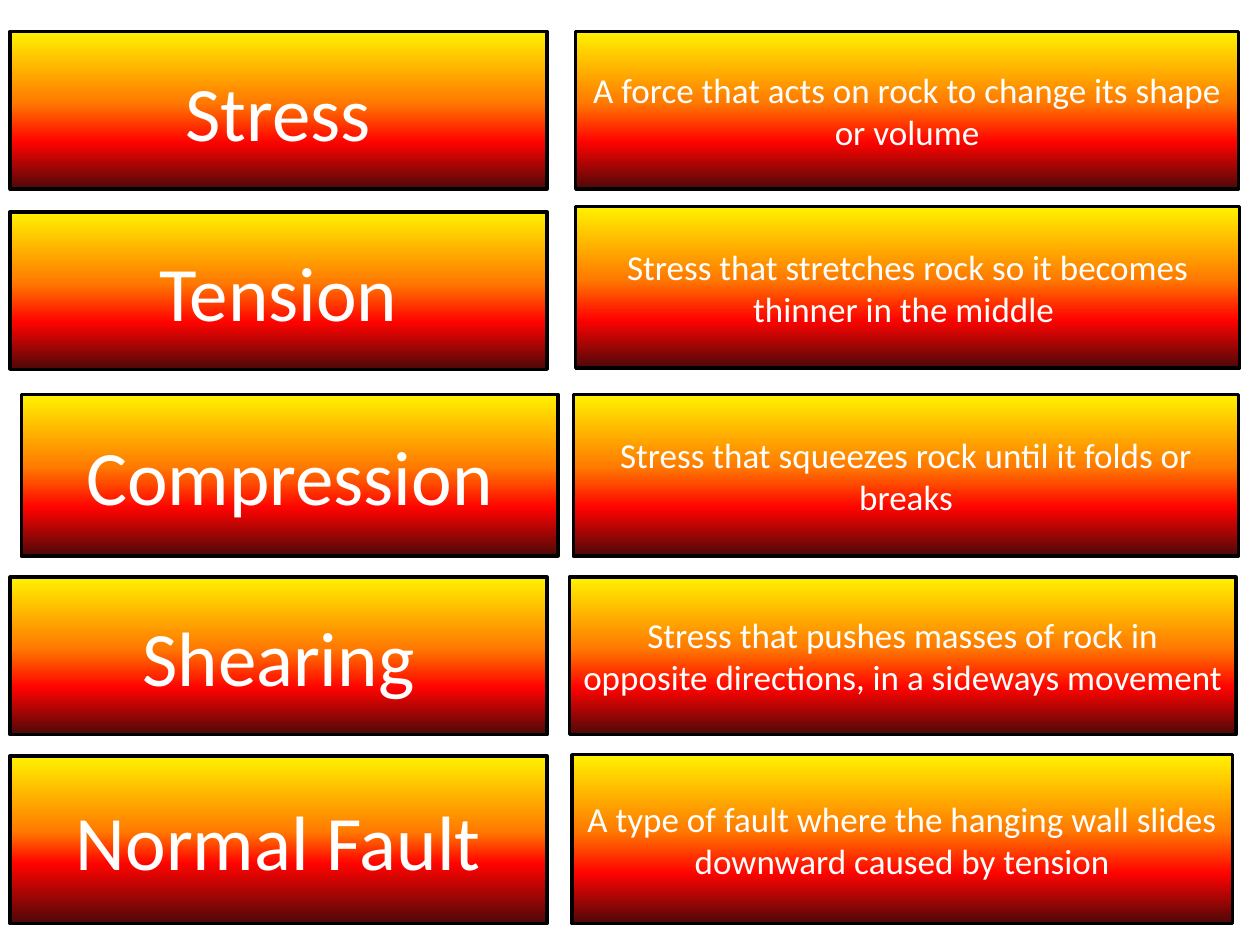
from copy import deepcopy
from dataclasses import dataclass

from pptx import Presentation
from pptx import util as u
from pptx.dml.color import RGBColor
from pptx.enum import shapes, text


@dataclass(frozen=True)
class Theme:
    """Hold the colours, font and type sizes of the slide."""
    font: str = "Calibri"
    ink: str = "FFFFFF"
    outline: str = "000000"
    outline_width: float = 2
    fire: tuple = ("FFF200", "FF7A00", "FF0300", "4D0808")
    term_size: int = 44
    definition_size: int = 20


THEME = Theme()
TERM_LEFT = 5.8
TERM_WIDTH = 306.7
RED_STOP = 0.7

TERMS = [
    ("Stress", TERM_LEFT, 18, 90, RED_STOP),
    ("Tension", TERM_LEFT, 121, 90, RED_STOP),
    ("Compression", 12.2, 225.4, 92.2, RED_STOP),
    ("Shearing", TERM_LEFT, 329.8, 90, RED_STOP),
    ("Normal Fault", TERM_LEFT, 432, 95.8, 0.64),
]
DEFINITIONS = [
    ("A force that acts on rock to change its shape or volume", 329, 18, 378.7, 90),
    ("Stress that stretches rock so it becomes thinner in the middle ", 329, 118.1, 379.4, 92.2),
    ("Stress that squeezes rock until it folds or breaks", 327.6, 225.4, 380.2, 92.2),
    ("Stress that pushes masses of rock in opposite directions, in a sideways movement",
     325.4, 329.8, 380.9, 90),
    ("A type of fault where the hanging wall slides downward caused by tension",
     326.9, 431.3, 377.3, 96.5),
]


def apply_format(target, values):
    """Set each named attribute on the target."""
    for name, value in values.items():
        setattr(target, name, value)


def fill_fire(shape, red_stop):
    """Fill the shape with the vertical fire gradient."""
    shape.fill.gradient()
    shape.fill.gradient_angle = 270
    stop_list = shape.element.xpath(".//a:gsLst")[0]
    for stop in list(stop_list):
        stop_list.append(deepcopy(stop))
    positions = (0, 0.45, red_stop, 1)
    for stop, position, color in zip(shape.fill.gradient_stops, positions, THEME.fire):
        stop.position = position
        stop.color.rgb = RGBColor.from_string(color)


def write_text(shape, wording, size):
    """Write one centred paragraph in the shape."""
    apply_format(shape.text_frame, {
        "word_wrap": True,
        "vertical_anchor": text.MSO_ANCHOR.MIDDLE,
    })
    paragraph = shape.text_frame.paragraphs[0]
    paragraph.alignment = text.PP_ALIGN.CENTER
    run = paragraph.add_run()
    run.text = wording
    apply_format(run.font, {"name": THEME.font, "size": u.Pt(size)})
    run.font.color.rgb = RGBColor.from_string(THEME.ink)


def add_card(slide, wording, bounds, size, red_stop=RED_STOP):
    """Add a gradient card with its wording."""
    shape = slide.shapes.add_shape(
        shapes.MSO_SHAPE.FLOWCHART_PROCESS, *[u.Pt(length) for length in bounds])
    shape.shadow.inherit = False
    fill_fire(shape, red_stop)
    shape.line.color.rgb = RGBColor.from_string(THEME.outline)
    shape.line.width = u.Pt(THEME.outline_width)
    write_text(shape, wording, size)


def main():
    """Build the vocabulary slide and save it."""
    presentation = Presentation()
    apply_format(presentation, {"slide_width": u.Pt(720), "slide_height": u.Pt(540)})
    slide = presentation.slides.add_slide(presentation.slide_layouts.get_by_name("Blank"))
    for term, definition in zip(TERMS, DEFINITIONS):
        wording, left, top, height, red_stop = term
        add_card(slide, wording, (left, top, TERM_WIDTH, height), THEME.term_size, red_stop)
        meaning, *bounds = definition
        add_card(slide, meaning, bounds, THEME.definition_size)
    presentation.save("out.pptx")


if __name__ == "__main__":
    main()
